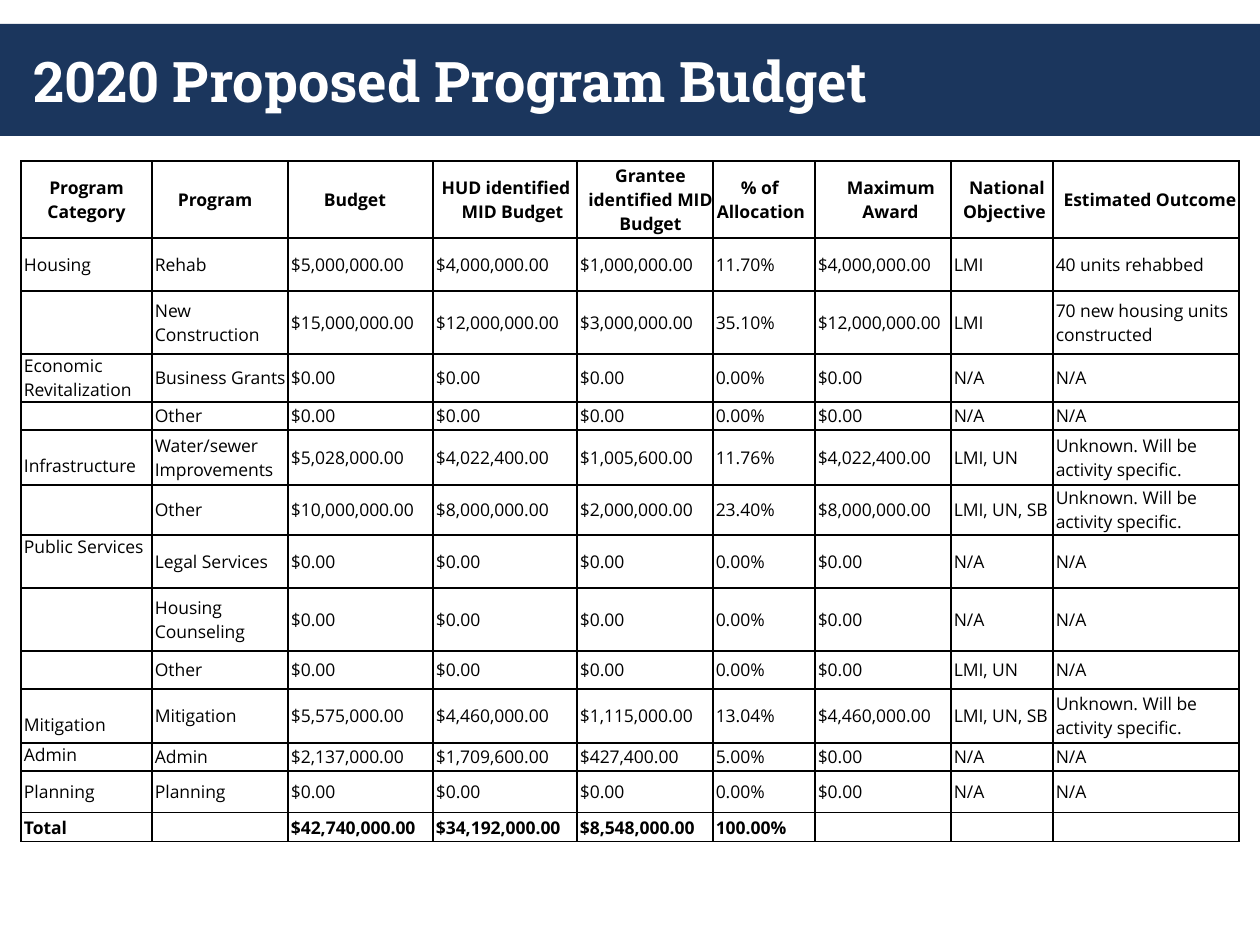
import pptx
import pptx.util
import pptx.dml.color
import pptx.enum.shapes
import pptx.enum.text
import pptx.oxml
import pptx.oxml.ns

PX = 914400 / 126
COLORS = {"navy": "1B365D", "white": "FFFFFF", "black": "000000"}
ALIGN = pptx.enum.text.PP_ALIGN
ANCHOR = pptx.enum.text.MSO_ANCHOR

COLUMNS = [131, 136, 145, 144, 136, 102, 136, 102, 186]
ROWS = [77, 53, 63, 48, 28, 55, 50, 53, 63, 38, 54, 28, 42, 29]
LINE = 24

# Heading text, alignment, left margin and first-line indent
HEADINGS = [
    ("Program Category", ALIGN.CENTER, 0, 0),
    ("Program", ALIGN.LEFT, 26, 0),
    ("Budget", ALIGN.LEFT, 36, 0),
    ("HUD identified MID Budget", ALIGN.CENTER, 15, -13),
    ("Grantee identified MID Budget", ALIGN.CENTER, 11, 0),
    ("% of Allocation", ALIGN.LEFT, 4, 24),
    ("Maximum Award", ALIGN.CENTER, 15, 1),
    ("National Objective", ALIGN.CENTER, 5, 5),
    ("Estimated Outcome", ALIGN.CENTER, 8, 0),
]
ZERO = ["$0.00", "$0.00", "$0.00", "0.00%", "$0.00"]
NONE = ["N/A", "N/A"]
UNKNOWN = "Unknown. Will be activity specific."
BUDGET = [
    ["Housing", "Rehab", "$5,000,000.00", "$4,000,000.00", "$1,000,000.00",
     "11.70%", "$4,000,000.00", "LMI", "40 units rehabbed"],
    ["", "New Construction", "$15,000,000.00", "$12,000,000.00", "$3,000,000.00",
     "35.10%", "$12,000,000.00", "LMI", "70 new housing units constructed"],
    ["Economic Revitalization", "Business Grants", *ZERO, *NONE],
    ["", "Other", *ZERO, *NONE],
    ["Infrastructure", "Water/sewer Improvements", "$5,028,000.00", "$4,022,400.00",
     "$1,005,600.00", "11.76%", "$4,022,400.00", "LMI, UN", UNKNOWN],
    ["", "Other", "$10,000,000.00", "$8,000,000.00", "$2,000,000.00",
     "23.40%", "$8,000,000.00", "LMI, UN, SB", UNKNOWN],
    ["Public Services", "Legal Services", *ZERO, *NONE],
    ["", "Housing Counseling", *ZERO, *NONE],
    ["", "Other", *ZERO, "LMI, UN", "N/A"],
    ["Mitigation", "Mitigation", "$5,575,000.00", "$4,460,000.00", "$1,115,000.00",
     "13.04%", "$4,460,000.00", "LMI, UN, SB", UNKNOWN],
    ["Admin", "Admin", "$2,137,000.00", "$1,709,600.00", "$427,400.00",
     "5.00%", "$0.00", *NONE],
    ["Planning", "Planning", *ZERO, *NONE],
    ["Total", "", "$42,740,000.00", "$34,192,000.00", "$8,548,000.00",
     "100.00%", "", "", ""],
]
# Categories set from the top of the cell, with their offset
TOP_OFFSETS = {"Infrastructure": LINE, "Public Services": 0, "Mitigation": LINE, "Admin": 0}


def px(n):
    return pptx.util.Emu(round(n * PX))


def rgb(name):
    return pptx.dml.color.RGBColor.from_string(COLORS[name])


class Deck:
    title_font, body_font = "Roboto Slab", "Open Sans"
    title_size, body_size = 32, 10

    def __init__(self, prs):
        self.s = prs.slides.add_slide(prs.slide_layouts[6])

    def band(self, x, y, w, h, color):
        sp = self.s.shapes.add_shape(
            pptx.enum.shapes.MSO_SHAPE.RECTANGLE, px(x), px(y), px(w), px(h))
        sp.shadow.inherit = False
        sp.fill.solid()
        sp.fill.fore_color.rgb = rgb(color)
        sp.line.fill.background()

    def run(self, p, text, font, size, color, bold=False):
        r = p.add_run()
        r.text = text
        r.font.name = font
        r.font.size = pptx.util.Pt(size)
        r.font.bold = bold
        r.font.color.rgb = rgb(color)

    def title(self, x, y, w, h, text):
        tf = self.s.shapes.add_textbox(px(x), px(y), px(w), px(h)).text_frame
        tf.word_wrap = True
        tf.vertical_anchor = ANCHOR.MIDDLE
        self.run(tf.paragraphs[0], text, self.title_font, self.title_size, "white", True)

    def table(self, x, y, columns, rows):
        tbl = self.s.shapes.add_table(len(rows), len(columns), px(x), px(y),
                                      px(sum(columns)), px(sum(rows))).table
        tbl.first_row = tbl.horz_banding = False
        for col, w in zip(tbl.columns, columns):
            col.width = px(w)
        for row, h in zip(tbl.rows, rows):
            row.height = px(h)
        return tbl

    def cell(self, cell, text, bold=False, align=ALIGN.LEFT, left=3, indent=0, top=None):
        cell.margin_left = cell.margin_right = cell.margin_bottom = 0
        cell.margin_top = px(top or 0)
        cell.vertical_anchor = ANCHOR.MIDDLE if top is None else ANCHOR.TOP
        cell.fill.solid()
        cell.fill.fore_color.rgb = rgb("white")
        self.borders(cell)
        p = cell.text_frame.paragraphs[0]
        p.alignment = align
        pPr = p._p.get_or_add_pPr()
        pPr.set("marL", str(px(left)))
        pPr.set("indent", str(px(indent)))
        if text:
            self.run(p, text, self.body_font, self.body_size, "black", bold)
        else:
            end = pptx.oxml.parse_xml(
                f'<a:endParaRPr {pptx.oxml.ns.nsdecls("a")} sz="{self.body_size * 100}"/>')
            p._p.append(end)

    def borders(self, cell):
        tcPr = cell._tc.get_or_add_tcPr()
        for i, side in enumerate("LRTB"):
            tcPr.insert(i, pptx.oxml.parse_xml(
                f'<a:ln{side} {pptx.oxml.ns.nsdecls("a")} w="12700"><a:solidFill>'
                f'<a:srgbClr val="{COLORS["black"]}"/></a:solidFill></a:ln{side}>'))


def main():
    prs = pptx.Presentation()
    prs.slide_width, prs.slide_height = px(1260), px(945)
    deck = Deck(prs)

    # Title band
    deck.band(0, 24, 1260, 112, "navy")
    deck.title(21, 24, 1218, 113, "2020 Proposed Program Budget")

    # Budget table
    tbl = deck.table(21, 161, COLUMNS, ROWS)
    for c, (text, align, left, indent) in enumerate(HEADINGS):
        deck.cell(tbl.cell(0, c), text, True, align, left, indent)
    for r, values in enumerate(BUDGET, 1):
        for c, text in enumerate(values):
            top = TOP_OFFSETS.get(text) if c == 0 else None
            deck.cell(tbl.cell(r, c), text, values[0] == "Total", top=top)

    prs.save("out.pptx")


if __name__ == "__main__":
    main()
